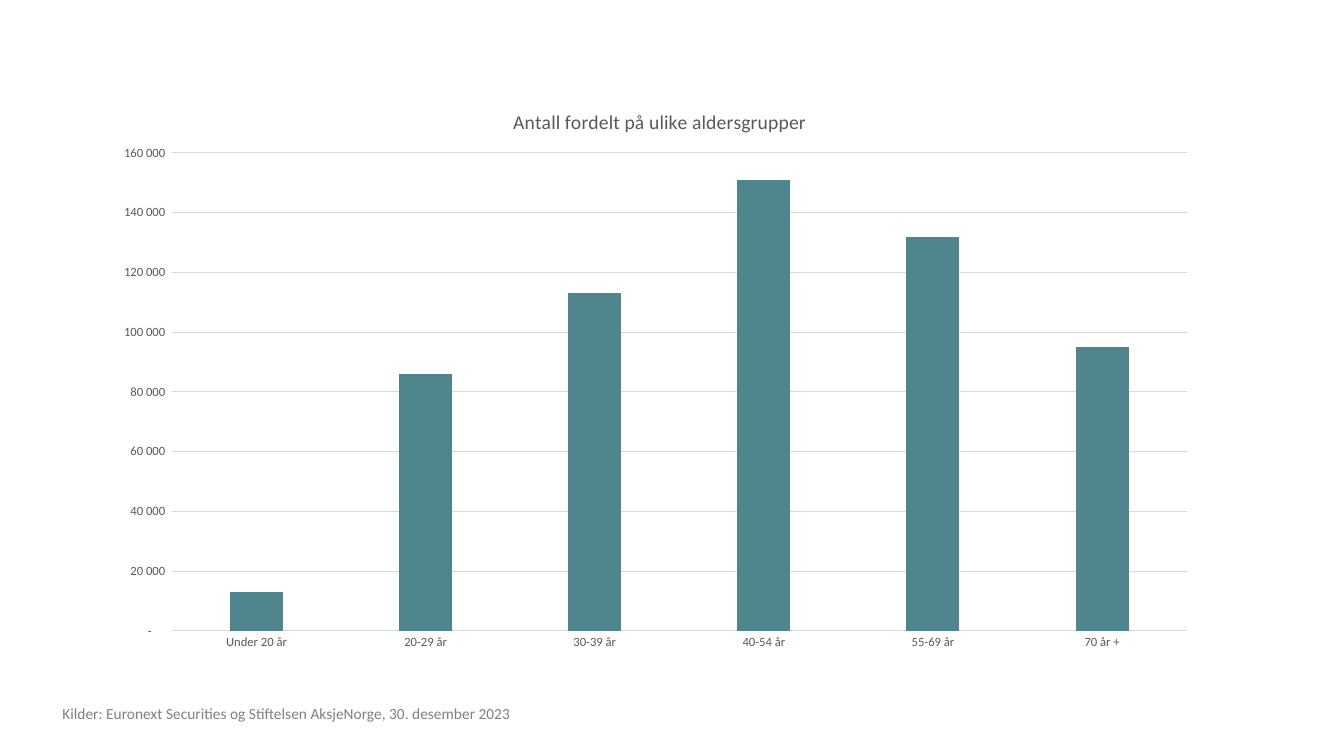
"""Build a slide with a column chart of shareholder numbers by age group."""
from lxml import etree
from pptx import Presentation
from pptx import util as u
from pptx.chart import data as chart_data
from pptx.dml import color
from pptx.enum import chart as charts, text

THEME = {
    "font": "Calibri",
    "bar": color.RGBColor.from_string("4F868E"),
    "label": color.RGBColor.from_string("595959"),
    "grid": color.RGBColor.from_string("D9D9D9"),
    "source": color.RGBColor.from_string("808080"),
    "title_size": u.Pt(14),
    "source_size": u.Pt(11),
    "chart_size": u.Pt(10),
    "axis_size": u.Pt(9),
    "line_width": u.Pt(0.75),
}
AGE_GROUPS = {
    "Under 20 år": 13000,
    "20-29 år": 86000,
    "30-39 år": 113000,
    "40-54 år": 151000,
    "55-69 år": 132000,
    "70 år +": 95000,
}
NUMBER_FORMAT = r'_-* #\ ##0_-;\-* #\ ##0_-;_-* "-"??_-;_-@_-'


def style_font(font, size, tint):
    for name, value in {"name": THEME["font"], "size": THEME[size], "bold": False}.items():
        setattr(font, name, value)
    font.color.rgb = THEME[tint]


def place(parent, **settings):
    layout = parent.find("{*}layout")
    if layout is None:
        layout = etree.Element(parent.tag.replace(etree.QName(parent).localname, "layout"))
        before = parent.find("{*}tx")
        parent.insert(0 if before is None else parent.index(before) + 1, layout)
    for child in list(layout):
        layout.remove(child)
    namespace = etree.QName(layout).namespace
    manual = etree.SubElement(layout, f"{{{namespace}}}manualLayout")
    for name, value in settings.items():
        etree.SubElement(manual, f"{{{namespace}}}{name}").set("val", str(value))


deck = Presentation()
deck.slide_width, deck.slide_height = u.Inches(13.33), u.Inches(7.5)
page = deck.slides.add_slide(deck.slide_layouts[6])

source_box = page.shapes.add_textbox(u.Inches(0.52), u.Inches(6.94), u.Inches(4.84), u.Inches(0.29))
frame = source_box.text_frame
for name, value in {"word_wrap": True, "auto_size": text.MSO_AUTO_SIZE.SHAPE_TO_FIT_TEXT}.items():
    setattr(frame, name, value)
span = frame.paragraphs[0].add_run()
span.text = "Kilder: Euronext Securities og Stiftelsen AksjeNorge, 30. desember 2023"
style_font(span.font, "source_size", "source")

numbers = chart_data.CategoryChartData(number_format=NUMBER_FORMAT)
numbers.categories = list(AGE_GROUPS)
numbers.add_series("Antall", list(AGE_GROUPS.values()))
chart = page.shapes.add_chart(
    charts.XL_CHART_TYPE.COLUMN_CLUSTERED,
    u.Inches(0.98), u.Inches(0.81), u.Inches(11.01), u.Inches(5.75), numbers,
).chart
style_font(chart.font, "chart_size", "label")
chart.has_legend = False

title = chart.chart_title
title.include_in_layout = False
span = title.text_frame.paragraphs[0].add_run()
span.text = "Antall fordelt på ulike aldersgrupper"
style_font(span.font, "title_size", "label")
chart_area = chart.plots[0].bars if hasattr(chart.plots[0], "bars") else chart.element.find("{*}chart")
place(chart_area.find("{*}title"), xMode="edge", yMode="edge", x=0.37, y=0.04)
place(chart_area.find("{*}plotArea"), layoutTarget="inner", xMode="edge", yMode="edge",
      x=0.066, y=0.123, w=0.914, h=0.825)

plot = chart.plots[0]
for name, value in {"gap_width": 219, "overlap": -27, "vary_by_categories": False}.items():
    setattr(plot, name, value)
bars = plot.series[0].format.fill
bars.solid()
bars.fore_color.rgb = THEME["bar"]

ages, counts = chart.category_axis, chart.value_axis
for axis in (ages, counts):
    axis.major_tick_mark = axis.minor_tick_mark = charts.XL_TICK_MARK.NONE
    style_font(axis.tick_labels.font, "axis_size", "label")
for name, value in {"minimum_scale": 0, "maximum_scale": 160000, "major_unit": 20000}.items():
    setattr(counts, name, value)
counts.tick_labels.number_format = NUMBER_FORMAT
counts.tick_labels.number_format_is_linked = False
counts.format.line.fill.background()
for line in (ages.format.line, counts.major_gridlines.format.line):
    line.color.rgb = THEME["grid"]
    line.width = THEME["line_width"]

deck.save("out.pptx")
